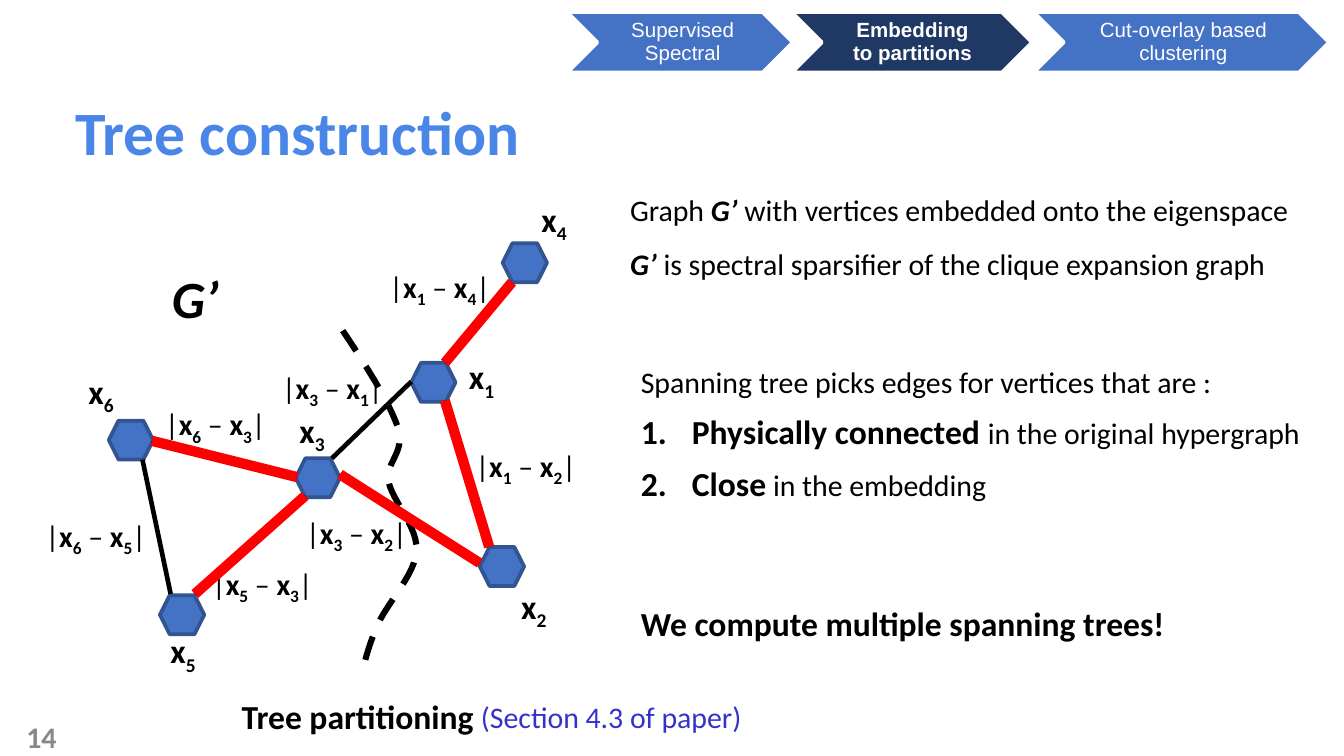
"""Build the slide on tree construction from an embedded graph."""
from lxml.etree import SubElement
from pptx import Presentation
from pptx.dml.color import RGBColor
from pptx.enum.dml import MSO_LINE
from pptx.enum.shapes import MSO_CONNECTOR, MSO_SHAPE
from pptx.enum.text import MSO_ANCHOR, PP_ALIGN
from pptx.oxml.ns import qn
from pptx.util import Inches, Pt

COLORS = {"title": "4A86E8", "text": "000000", "node": "4472C4", "node_line": "325491",
          "tree": "FF0000", "active": "203864", "white": "FFFFFF", "number": "888888",
          "reference": "3333CC"}
STYLES = {"": {}, "b": {"bold": True}, "i": {"bold": True, "italic": True},
          "sub": {"bold": True}, "big": {"bold": True, "size": Pt(18)}}

TITLE = "Tree construction"
STEPS = [("Supervised Spectral", 4.22, 1.68, 4.56, 1.01, "node", ""),
         ("Embedding to partitions", 5.89, 1.79, 6.24, 1.07, "active", "b"),
         ("Cut-overlay based clustering", 7.69, 2.2, 8.13, 1.32, "node", "")]
NODES = {"1": ((3.06, 2.7), (3.39, 2.6)), "2": ((3.57, 4.07), (3.78, 4.31)),
         "3": ((2.2, 3.41), (2.13, 3)), "4": ((3.74, 1.81), (3.93, 1.43)),
         "5": ((1.19, 4.43), (1.17, 4.64)), "6": ((0.81, 3.13), (0.56, 2.71))}
NODE_SIZE = (0.33, 0.29)
TREE_EDGES = [((3.81, 2.1), (3.31, 2.7)), ((2.53, 3.53), (3.57, 4.19)),
              ((3.31, 2.98), (3.64, 4.07)), ((1.13, 3.28), (2.21, 3.55)),
              ((2.27, 3.69), (1.45, 4.42))]
OTHER_EDGES = [((1.06, 3.42), (1.27, 4.42)), ((3.06, 2.84), (2.47, 3.41))]
DISTANCES = [("1", "2", 3.44, 3.28, 1.7), ("6", "3", 1.13, 2.97, 1.09),
             ("5", "3", 1.48, 4.16, 1.7), ("1", "4", 2.8, 1.95, 1.7),
             ("3", "2", 2.18, 3.78, 1.7), ("6", "5", 0.24, 3.8, 1.18),
             ("3", "1", 2, 2.7, 0.99)]
CUT_START = (2.55, 2.46)
CUT_CURVES = [((2.73, 2.73), (2.9, 3), (2.96, 3.18)),
              ((3.02, 3.37), (2.87, 3.43), (2.89, 3.58)),
              ((2.92, 3.73), (3.11, 3.92), (3.1, 4.1)),
              ((3.09, 4.27), (2.88, 4.49), (2.81, 4.65)),
              ((2.74, 4.81), (2.71, 4.93), (2.69, 5.04))]
CURVE_STEPS = 12
NOTES = [
    ((4.59, 1.38, 5.4, 0.37), 16, "text",
     [[("Graph ", ""), ("G’", "i"), (" with vertices embedded onto the eigenspace", "")]]),
    ((4.59, 1.78, 5.31, 0.37), 16, "text",
     [[("G’", "i"), (" is spectral sparsifier of the clique expansion graph", "")]]),
    ((4.67, 2.66, 5.27, 1.41), 16, "text",
     [[("Spanning tree picks edges for vertices that are :", "")],
      [("Physically connected ", "big"), ("in the original hypergraph", "")],
      [("Close", "big"), (" in the embedding", "")]]),
    ((4.67, 4.44, 4.59, 0.4), 18, "text", [[("We compute multiple spanning trees!", "b")]]),
    ((1.7, 5.13, 3.33, 0.4), 18, "text", [[("Tree partitioning", "b")]]),
    ((3.48, 5.15, 5.88, 0.37), 16, "reference", [[("(Section 4.3 of paper)", "")]]),
    ((1.18, 1.93, 0.96, 0.57), 28, "text", [[("G’", "i")]]),
]


def rgb(name):
    return RGBColor.from_string(COLORS[name])


def apply(target, values):
    for attribute, value in values.items():
        setattr(target, attribute, value)


def add_runs(paragraph, runs, size, color, font="Calibri"):
    for text, style in runs:
        run = paragraph.add_run()
        run.text = text
        apply(run.font, {"name": font, "size": Pt(size), "bold": False, **STYLES[style]})
        run.font.color.rgb = rgb(color)
        if style == "sub":
            run._r.get_or_add_rPr().set("baseline", "-25000")


def set_frame(frame, insets=(0.1, 0.05, 0.1, 0.05), anchor=MSO_ANCHOR.TOP):
    sides = ("margin_left", "margin_top", "margin_right", "margin_bottom")
    apply(frame, {"word_wrap": True, "vertical_anchor": anchor,
                  **dict(zip(sides, map(Inches, insets)))})


def number(paragraph):
    properties = paragraph._p.get_or_add_pPr()
    for key, indent in {"marL": 0.38, "indent": -0.38}.items():
        properties.set(key, str(Inches(indent)))
    bullet_color = SubElement(properties, qn("a:buClr"))
    SubElement(bullet_color, qn("a:srgbClr"), val=COLORS["text"])
    SubElement(properties, qn("a:buAutoNum"), type="arabicPeriod")
    paragraph.space_before = Pt(6)


def add_text(slide, box, size, color, paragraphs, font="Calibri", layout=None, **frame_format):
    frame = slide.shapes.add_textbox(*map(Inches, box)).text_frame
    set_frame(frame, **frame_format)
    for index, runs in enumerate(paragraphs):
        paragraph = frame.paragraphs[0] if index == 0 else frame.add_paragraph()
        if index:
            number(paragraph)
        apply(paragraph, layout or {})
        add_runs(paragraph, runs, size, color, font)


def add_preset(slide, preset, box, fill, line):
    shape = slide.shapes.add_shape(preset, *map(Inches, box))
    shape.shadow.inherit = False
    shape.fill.solid()
    shape.fill.fore_color.rgb = rgb(fill)
    shape.line.color.rgb = rgb(line)
    shape.line.width = Pt(2)


def add_edge(slide, start, end, color, width):
    edge = slide.shapes.add_connector(MSO_CONNECTOR.STRAIGHT, *map(Inches, start + end))
    edge.line.color.rgb = rgb(color)
    edge.line.width = Pt(width)
    SubElement(edge._element.spPr, qn("a:effectLst"))


def curve_points(start, curves):
    for first, second, end in curves:
        for step in range(1, CURVE_STEPS + 1):
            t = step / CURVE_STEPS
            yield tuple(Inches((1 - t) ** 3 * a + 3 * t * (1 - t) ** 2 * b
                               + 3 * t ** 2 * (1 - t) * c + t ** 3 * d)
                        for a, b, c, d in zip(start, first, second, end))
        start = end


def add_cut(slide):
    builder = slide.shapes.build_freeform(*map(Inches, CUT_START))
    builder.add_line_segments(list(curve_points(CUT_START, CUT_CURVES)), close=False)
    cut = builder.convert_to_shape()
    cut.shadow.inherit = False
    cut.fill.background()
    cut.line.color.rgb = rgb("text")
    apply(cut.line, {"width": Pt(3.25), "dash_style": MSO_LINE.DASH})


def add_graph(slide):
    add_cut(slide)
    for index, (corner, label_corner) in NODES.items():
        add_preset(slide, MSO_SHAPE.HEXAGON, corner + NODE_SIZE, "node", "node_line")
        add_text(slide, label_corner + (0.85, 0.4), 18, "text", [[("x", "b"), (index, "sub")]])
    for first, second, left, top, width in DISTANCES:
        runs = [("|", ""), ("x", "b"), (first, "sub"), (" – ", ""),
                ("x", "b"), (second, "sub"), ("|", "")]
        add_text(slide, (left, top, width, 0.64), 16, "text", [runs])
    for start, end in TREE_EDGES + OTHER_EDGES:
        add_edge(slide, start, end, "text", 2.5)
    for start, end in TREE_EDGES:
        add_edge(slide, start, end, "tree", 5.5)


def main():
    deck = Presentation()
    apply(deck, {"slide_width": Inches(10), "slide_height": Inches(10) * 9 // 16})
    slide = deck.slides.add_slide(deck.slide_layouts[5])
    title = slide.shapes.title
    apply(title, dict(zip(("left", "top", "width", "height"),
                          map(Inches, (0.49, 0.46, 9.21, 1.09)))))
    set_frame(title.text_frame, (0.07, 0.04, 0.07, 0.04), MSO_ANCHOR.MIDDLE)
    heading = title.text_frame.paragraphs[0]
    apply(heading, {"alignment": PP_ALIGN.LEFT, "line_spacing": 0.9})
    add_runs(heading, [(TITLE, "b")], 33, "title")

    add_graph(slide)
    for box, size, color, paragraphs in NOTES:
        add_text(slide, box, size, color, paragraphs)
    for text, left, width, text_left, text_width, fill, style in STEPS:
        add_preset(slide, MSO_SHAPE.CHEVRON, (left, 0.09, width, 0.45), fill, "white")
        add_text(slide, (text_left, 0.09, text_width, 0.45), 11, "white", [[(text, style)]],
                 "Arial", {"alignment": PP_ALIGN.CENTER, "line_spacing": 0.9},
                 insets=(0.05, 0.02, 0.02, 0.02), anchor=MSO_ANCHOR.MIDDLE)
    add_text(slide, (0, 5.33, 0.49, 0.3), 16, "number", [[("14", "b")]],
             layout={"alignment": PP_ALIGN.RIGHT},
             insets=(0.07, 0.04, 0.07, 0.04), anchor=MSO_ANCHOR.MIDDLE)
    deck.save("out.pptx")


if __name__ == "__main__":
    main()
